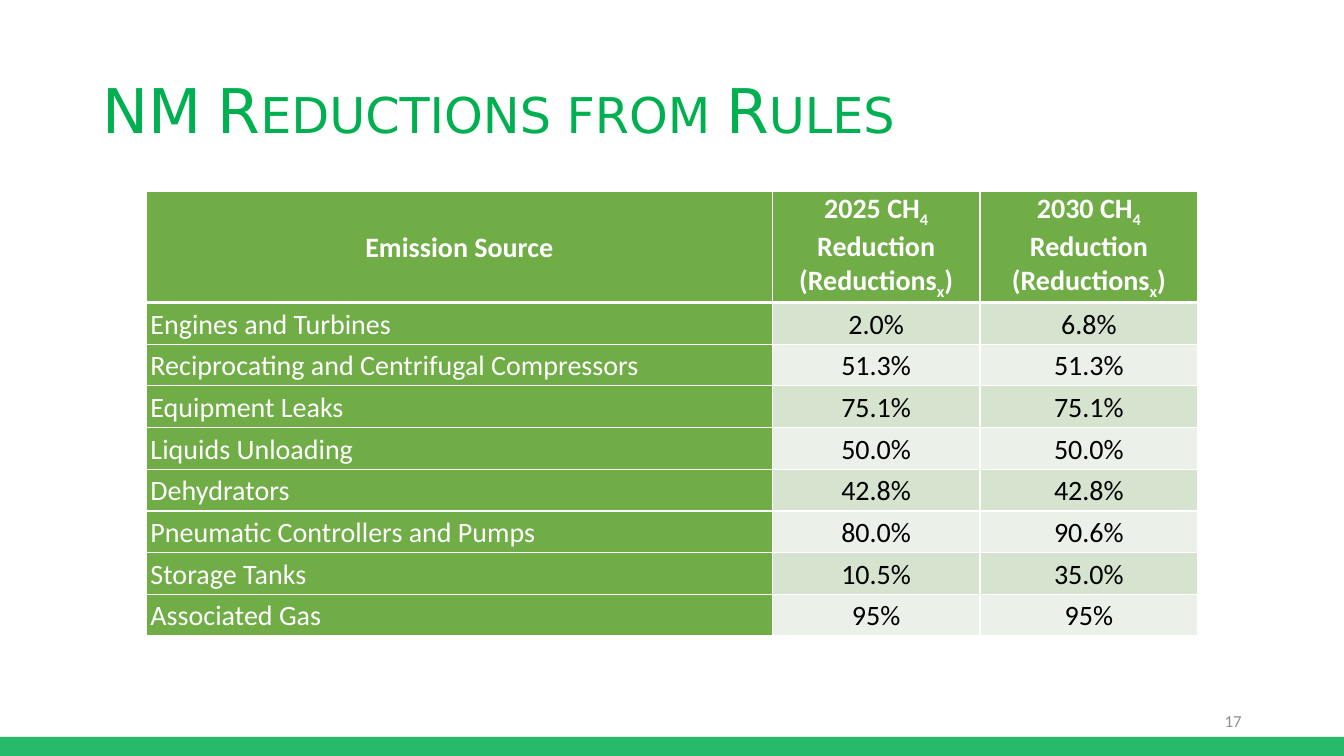
"""Build the slide on New Mexico methane reductions from rules."""
import pptx
import pptx.util
import pptx.dml.color
import pptx.enum.shapes
import pptx.enum.text
import pptx.oxml
import pptx.oxml.ns

TITLE = "NM Reductions from Rules"
PAGE = "17"
YEARS = ["2025", "2030"]
ROWS = [
    ("Engines and Turbines", "2.0%", "6.8%"),
    ("Reciprocating and Centrifugal Compressors", "51.3%", "51.3%"),
    ("Equipment Leaks", "75.1%", "75.1%"),
    ("Liquids Unloading", "50.0%", "50.0%"),
    ("Dehydrators", "42.8%", "42.8%"),
    ("Pneumatic Controllers and Pumps", "80.0%", "90.6%"),
    ("Storage Tanks", "10.5%", "35.0%"),
    ("Associated Gas", "95%", "95%"),
]
HEADS = [[("Emission Source", False)]] + [
    [(year + " CH", False), ("4", True), (" Reduction (Reductions", False),
     ("x", True), (")", False)]
    for year in YEARS
]
COLORS = {
    "title": "00B050", "page": "8C8C8C", "head": "70AD47", "odd": "D5E3CF",
    "even": "EBF1E9", "white": "FFFFFF", "black": "000000",
}
WIDE, HIGH = 960, 540
COLS = [447, 148.5, 155.5]
HEAD_H, ROW_H = 79.2, 29.8

Pt = pptx.util.Pt
ALIGN = pptx.enum.text.PP_ALIGN
MIDDLE = pptx.enum.text.MSO_ANCHOR.MIDDLE


def color(name):
    return pptx.dml.color.RGBColor.from_string(COLORS[name])


def style(para, face, size, tint, align, bold=False):
    para.alignment = align
    font = para.font
    font.name, font.size, font.bold = face, Pt(size), bold
    font.color.rgb = color(tint)


def border(cell, side, width):
    props = cell._tc.get_or_add_tcPr()
    props.append(pptx.oxml.parse_xml(
        f'<a:ln{side} {pptx.oxml.ns.nsdecls("a")} w="{Pt(width)}"><a:solidFill>'
        f'<a:srgbClr val="{COLORS["white"]}"/></a:solidFill></a:ln{side}>'))


def fill_cell(cell, parts, row, col):
    head = row == 0
    label = head or col == 0
    cell.vertical_anchor = MIDDLE
    cell.margin_left = cell.margin_right = Pt(2.9)
    cell.margin_top = cell.margin_bottom = 0
    for side in "LRTB":
        thick = (head and side == "B") or (row == 1 and side == "T")
        border(cell, side, 3 if thick else 1)
    cell.fill.solid()
    cell.fill.fore_color.rgb = color(
        "head" if label else "odd" if row % 2 else "even")
    para = cell.text_frame.paragraphs[0]
    style(para, "Calibri", 20, "white" if label else "black",
          ALIGN.CENTER if head or col else ALIGN.LEFT, head)
    if not head or col == 0:
        para.line_spacing = 1.07
    for text, sub in parts:
        run = para.add_run()
        run.text = text
        if sub:
            run._r.get_or_add_rPr().set("baseline", "-25000")


def add_bar(slide):
    bar = slide.shapes.add_shape(
        pptx.enum.shapes.MSO_SHAPE.RECTANGLE, 0, Pt(526.3), Pt(WIDE), Pt(13.7))
    bar.shadow.inherit = False
    bar.line.fill.background()
    bar.fill.solid()
    bar.fill.fore_color.rgb = color("title")
    tint = bar._element.spPr.find(".//" + pptx.oxml.ns.qn("a:srgbClr"))
    tint.append(pptx.oxml.parse_xml(
        f'<a:alpha {pptx.oxml.ns.nsdecls("a")} val="85000"/>'))


def add_title(slide):
    title = slide.shapes.title
    title.left, title.top = Pt(66), Pt(28.8)
    title.width, title.height = Pt(828), Pt(104.4)
    frame = title.text_frame
    frame.text = TITLE
    frame.auto_size = pptx.enum.text.MSO_AUTO_SIZE.NONE
    frame.vertical_anchor = MIDDLE
    para = frame.paragraphs[0]
    style(para, "DejaVu Sans", 44, "title", ALIGN.LEFT)
    para.line_spacing = 0.9
    para._p.get_or_add_pPr().get_or_add_defRPr().set("cap", "small")


def add_page(slide):
    frame = slide.shapes.add_textbox(
        Pt(678), Pt(500.5), Pt(216), Pt(28.8)).text_frame
    frame.word_wrap = True
    frame.vertical_anchor = MIDDLE
    frame.text = PAGE
    style(frame.paragraphs[0], "Calibri", 12, "page", ALIGN.RIGHT)


def add_grid(slide):
    lines = [HEADS] + [[[(text, False)] for text in row] for row in ROWS]
    table = slide.shapes.add_table(
        len(lines), len(COLS), Pt(104.6), Pt(136.8), Pt(sum(COLS)),
        Pt(HEAD_H + ROW_H * len(ROWS))).table
    for col, width in enumerate(COLS):
        table.columns[col].width = Pt(width)
    for row, line in enumerate(lines):
        table.rows[row].height = Pt(ROW_H if row else HEAD_H)
        for col, parts in enumerate(line):
            fill_cell(table.cell(row, col), parts, row, col)


def main():
    deck = pptx.Presentation()
    deck.slide_width, deck.slide_height = Pt(WIDE), Pt(HIGH)
    slide = deck.slides.add_slide(deck.slide_layouts[5])
    add_bar(slide)
    add_title(slide)
    add_page(slide)
    add_grid(slide)
    deck.save("out.pptx")


if __name__ == "__main__":
    main()
